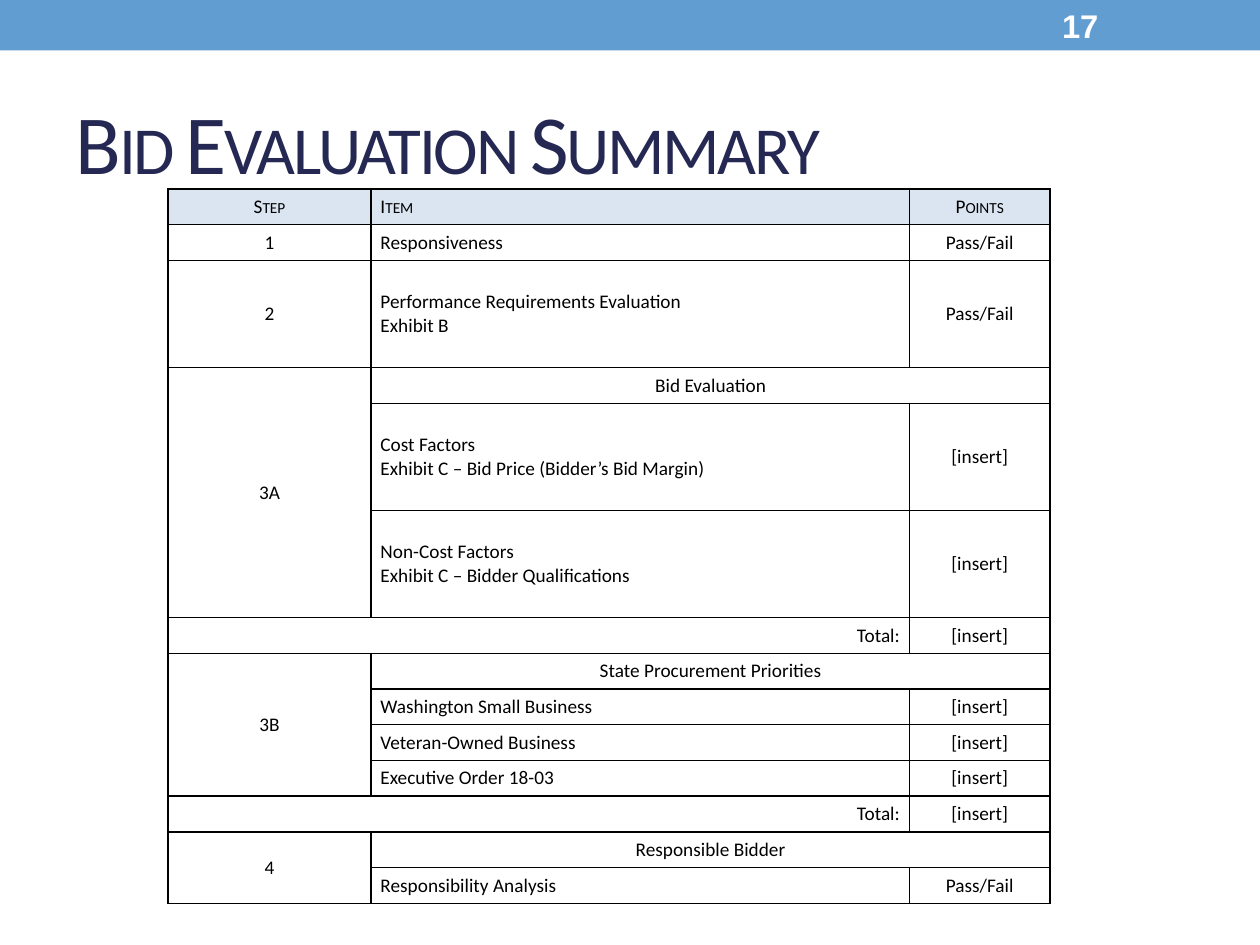
from dataclasses import dataclass

from lxml import etree
from pptx import Presentation
from pptx import util as u
from pptx.dml.color import RGBColor
from pptx.enum import shapes, text
from pptx.oxml import ns
from pptx.slide import Slide
from pptx.table import _Cell as Cell

COLORS = {
    "bar": "629DD1",
    "title": "242852",
    "header": "DBE5F1",
    "black": "000000",
    "white": "FFFFFF",
}
LEFT, CENTER, RIGHT = text.PP_ALIGN.LEFT, text.PP_ALIGN.CENTER, text.PP_ALIGN.RIGHT
COLUMN_WIDTHS = (4.09, 10.85, 2.84)
LOW, TALL = 0.72, 2.16


@dataclass(frozen=True)
class Entry:
    """One table row; a step covers `steps` rows, and no step continues the one above."""
    step: str
    item: str
    points: str
    steps: int = 1
    height: float = LOW


def heading(step: str, item: str, steps: int) -> Entry:
    """A group heading, whose item runs on over the points column."""
    return Entry(step, item, "", steps)


def total() -> Entry:
    """A total, whose label fills the step and item columns."""
    return Entry("Total:", "", "[insert]")


ENTRIES = (
    Entry("Step", "Item", "Points"),
    Entry("1", "Responsiveness", "Pass/Fail"),
    Entry("2", "Performance Requirements Evaluation\vExhibit B", "Pass/Fail", height=TALL),
    heading("3A", "Bid Evaluation", 3),
    Entry("", "Cost Factors\vExhibit C – Bid Price (Bidder’s Bid Margin)", "[insert]", height=TALL),
    Entry("", "Non-Cost Factors\vExhibit C – Bidder Qualifications", "[insert]", height=TALL),
    total(),
    heading("3B", "State Procurement Priorities", 4),
    Entry("", "Washington Small Business", "[insert]"),
    Entry("", "Veteran-Owned Business", "[insert]"),
    Entry("", "Executive Order 18-03", "[insert]"),
    total(),
    heading("4", "Responsible Bidder", 2),
    Entry("", "Responsibility Analysis", "Pass/Fail"),
)


def rgb(name: str) -> RGBColor:
    return RGBColor.from_string(COLORS[name])


def format_text(frame, size: float, color: str, font: str = "Calibri",
                align=LEFT, bold: bool = False, small_caps: bool = False) -> None:
    frame.vertical_anchor = text.MSO_ANCHOR.MIDDLE
    for para in frame.paragraphs:
        para.alignment = align
        for span in para.runs:
            span.font.name, span.font.size, span.font.bold = font, u.Pt(size), bold
            span.font.color.rgb = rgb(color)
            if small_caps:
                span.font._element.set("cap", "small")


def add_borders(cell: Cell) -> None:
    properties = cell._tc.get_or_add_tcPr()
    for side in ("lnL", "lnR", "lnT", "lnB"):
        line = etree.SubElement(properties, ns.qn(f"a:{side}"), w=str(u.Pt(1)))
        fill = etree.SubElement(line, ns.qn("a:solidFill"))
        etree.SubElement(fill, ns.qn("a:srgbClr"), val=COLORS["black"])


def write_cell(cell: Cell, words: str, align, header: bool) -> None:
    cell.margin_left = cell.margin_right = u.Cm(0.19)
    cell.margin_top = cell.margin_bottom = 0
    cell.vertical_anchor = text.MSO_ANCHOR.MIDDLE
    cell.text_frame.text = words
    para = cell.text_frame.paragraphs[0]
    para.space_before = para.space_after = u.Pt(3)
    format_text(cell.text_frame, 11, "black", align=align, small_caps=header)


def add_summary_table(page: Slide) -> None:
    table = page.shapes.add_table(
        len(ENTRIES), len(COLUMN_WIDTHS), u.Cm(3.39), u.Cm(3.81),
        u.Cm(sum(COLUMN_WIDTHS)), u.Cm(sum(entry.height for entry in ENTRIES))).table
    table.first_row = table.horz_banding = False
    for column, width in zip(table.columns, COLUMN_WIDTHS):
        column.width = u.Cm(width)

    for index, entry in enumerate(ENTRIES):
        table.rows[index].height = u.Cm(entry.height)
        header = index == 0
        is_total, is_heading = not entry.item, not entry.points
        aligns = (RIGHT if is_total else CENTER, CENTER if is_heading else LEFT, CENTER)
        words = (entry.step, entry.item, entry.points)
        for column, (word, align) in enumerate(zip(words, aligns)):
            cell = table.cell(index, column)
            add_borders(cell)
            if header:
                cell.fill.solid()
                cell.fill.fore_color.rgb = rgb("header")
            else:
                cell.fill.background()
            write_cell(cell, word, align, header)
        if is_total:
            table.cell(index, 0).merge(table.cell(index, 1))
        if is_heading:
            table.cell(index, 1).merge(table.cell(index, 2))
        if entry.steps > 1:
            table.cell(index, 0).merge(table.cell(index + entry.steps - 1, 0))


def add_top_bar(page: Slide, width: int) -> None:
    bar = page.shapes.add_shape(shapes.MSO_SHAPE.RECTANGLE, 0, 0, width, u.Cm(1.02))
    bar.shadow.inherit = False
    bar.fill.solid()
    bar.fill.fore_color.rgb = rgb("bar")
    bar.line.fill.background()

    number = page.shapes.add_textbox(u.Cm(21.16), u.Cm(0.05), u.Cm(2.97), u.Cm(0.91))
    number.text_frame.word_wrap = True
    number.text_frame.text = "17"
    format_text(number.text_frame, 18.7, "white", font="Arial", bold=True)


def set_title(page: Slide, words: str) -> None:
    title = page.shapes.title
    title.left, title.top = u.Cm(1.27), u.Cm(1.47)
    title.width, title.height = u.Cm(22.86), u.Cm(2.74)
    title.text_frame.text = words
    format_text(title.text_frame, 48, "title", small_caps=True)
    title.text_frame.paragraphs[0].runs[0].font._element.set("spc", "-130")


def main() -> None:
    deck = Presentation()
    deck.slide_width, deck.slide_height = u.Cm(25.4), u.Cm(19.05)
    page = deck.slides.add_slide(deck.slide_layouts.get_by_name("Title Only"))
    add_top_bar(page, deck.slide_width)
    set_title(page, "Bid Evaluation Summary")
    add_summary_table(page)
    deck.save("out.pptx")


if __name__ == "__main__":
    main()
